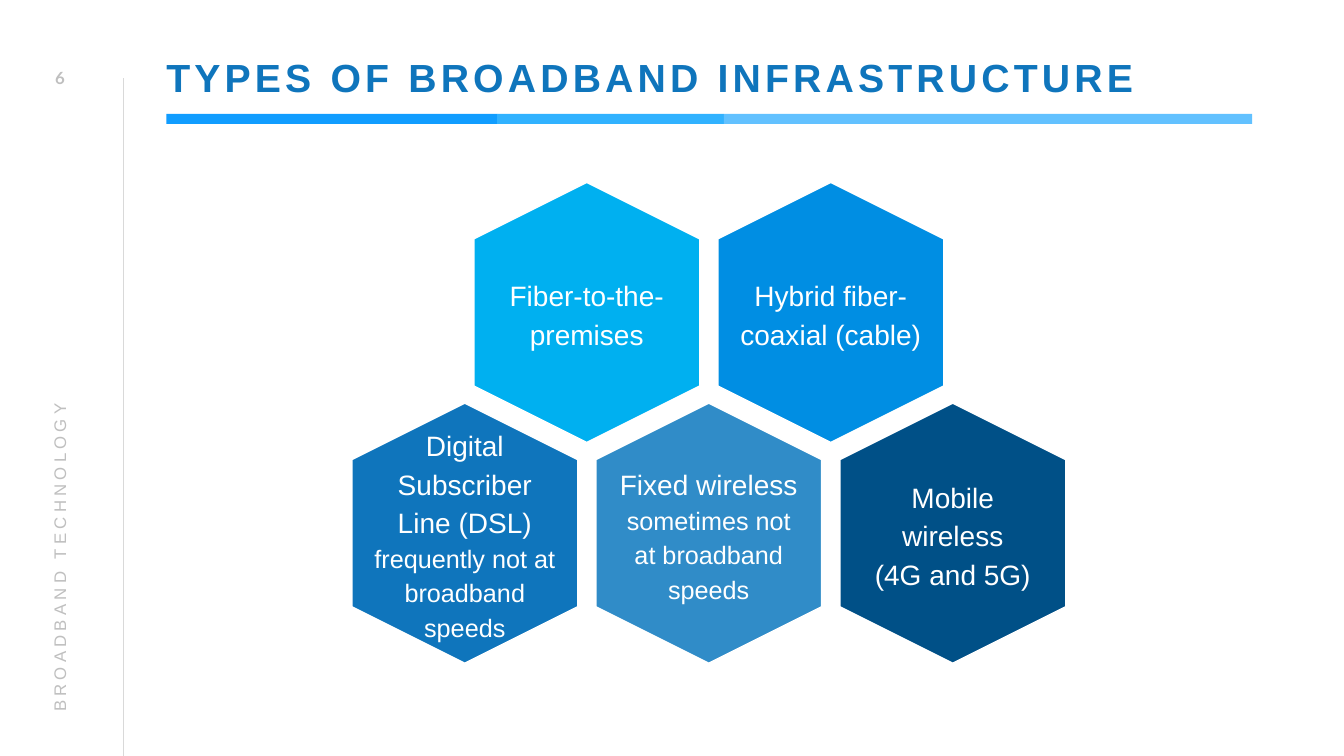
"""Build the slide on types of broadband infrastructure."""
from lxml import etree
from pptx import Presentation, util as u
from pptx.dml.color import RGBColor
from pptx.enum import shapes, text
from pptx.oxml import ns

WHITE = RGBColor(0xFF, 0xFF, 0xFF)
TITLE_BLUE = RGBColor(0x0F, 0x75, 0xBC)
GREY = RGBColor(0xBF, 0xBF, 0xBF)
RULE_GREY = RGBColor(0xD9, 0xD9, 0xD9)
CYAN = RGBColor(0x00, 0xB0, 0xF0)
AZURE = RGBColor(0x00, 0x8E, 0xE3)
STEEL = RGBColor(0x30, 0x8C, 0xC8)
NAVY = RGBColor(0x00, 0x50, 0x87)

TITLE = "TYPES OF BROADBAND INFRASTRUCTURE"
SECTION = "BROADBAND TECHNOLOGY"
PAGE = "6"
BAR_LEFT, BAR_TOP, BAR_HEIGHT = 1.65, 1.13, 0.1
BARS = [
    (3.28, RGBColor(0x11, 0x9D, 0xFF)),
    (2.25, RGBColor(0x31, 0xB2, 0xFF)),
    (5.24, RGBColor(0x62, 0xC1, 0xFF)),
]

HEX_WIDTH, HEX_HEIGHT, HEX_SHOULDER = 2.24, 2.58, 0.56
HEX_PITCH = 2.42
WIDE_INSETS, NARROW_INSETS = (0.22, 0.25), (0.18, 0.21)
HEX_ROWS = [
    (4.7, 1.81, [
        (CYAN, NARROW_INSETS, [("Fiber-to-the-premises", 20)]),
        (AZURE, WIDE_INSETS, [("Hybrid fiber-coaxial (cable)", 20)]),
    ]),
    (3.49, 4, [
        (TITLE_BLUE, WIDE_INSETS, [("Digital Subscriber Line (DSL)", 20),
                                   ("frequently not at broadband speeds", 18)]),
        (STEEL, WIDE_INSETS, [("Fixed wireless", 20),
                              ("sometimes not at broadband speeds", 18)]),
        (NAVY, NARROW_INSETS, [("Mobile wireless", 20), ("(4G and 5G)", 20)]),
    ]),
]


def add_run(paragraph, wording, size, color, font="Arial", bold=False, spacing=0):
    run = paragraph.add_run()
    run.text = wording
    run.font.size = u.Pt(size)
    run.font.name = font
    run.font.bold = bold
    run.font.color.rgb = color
    if spacing:
        run.font._element.set("spc", str(spacing * 100))


def set_frame(shape, insets):
    frame = shape.text_frame
    frame.word_wrap = True
    frame.vertical_anchor = text.MSO_ANCHOR.MIDDLE
    (frame.margin_left, frame.margin_top,
     frame.margin_right, frame.margin_bottom) = map(u.Inches, insets)
    return frame.paragraphs[0]


def add_label(slide, box, wording, size, color, insets=(0.1, 0.05, 0.1, 0.05),
              rotation=0, align=text.PP_ALIGN.LEFT, line_spacing=1.0, **style):
    shape = slide.shapes.add_textbox(*map(u.Inches, box))
    shape.rotation = rotation
    paragraph = set_frame(shape, insets)
    paragraph.alignment = align
    paragraph.line_spacing = line_spacing
    add_run(paragraph, wording, size, color, **style)


def add_side_rule(slide):
    rule = slide.shapes.add_connector(
        shapes.MSO_CONNECTOR.STRAIGHT, *map(u.Inches, (1.22, 7.5, 1.22, 0.77)))
    rule.line.color.rgb = RULE_GREY
    rule.line.width = u.Pt(0.5)
    etree.SubElement(rule._element.spPr, ns.qn("a:effectLst"))


def add_bars(slide):
    left = BAR_LEFT
    for width, color in BARS:
        bar = slide.shapes.add_shape(
            shapes.MSO_SHAPE.RECTANGLE,
            *map(u.Inches, (left, BAR_TOP, width, BAR_HEIGHT)))
        bar.shadow.inherit = False
        bar.fill.solid()
        bar.fill.fore_color.rgb = color
        bar.line.fill.background()
        left += width


def add_hexagon(slide, left, top, color, insets, lines):
    middle, right = left + HEX_WIDTH / 2, left + HEX_WIDTH
    upper, bottom = top + HEX_SHOULDER, top + HEX_HEIGHT
    lower = bottom - HEX_SHOULDER
    corners = [(middle, top), (right, upper), (right, lower),
               (middle, bottom), (left, lower), (left, upper)]
    points = [(u.Inches(x), u.Inches(y)) for x, y in corners]
    builder = slide.shapes.build_freeform(*points[0])
    builder.add_line_segments(points[1:], close=True)
    hexagon = builder.convert_to_shape()
    hexagon.shadow.inherit = False
    hexagon.fill.solid()
    hexagon.fill.fore_color.rgb = color
    hexagon.line.color.rgb = WHITE
    hexagon.line.width = u.Pt(1)
    paragraph = set_frame(hexagon, insets * 2)
    paragraph.alignment = text.PP_ALIGN.CENTER
    paragraph.line_spacing = 1.14
    for index, (wording, size) in enumerate(lines):
        if index:
            paragraph.add_line_break()
        add_run(paragraph, wording, size, WHITE)


def main():
    presentation = Presentation()
    presentation.slide_width = u.Inches(13.33)
    presentation.slide_height = u.Inches(7.5)
    slide = presentation.slides.add_slide(presentation.slide_layouts[6])
    add_side_rule(slide)
    add_bars(slide)
    add_label(slide, (BAR_LEFT, 0.4, 10.76, 0.74), TITLE, 28, TITLE_BLUE,
              insets=(0, 0.05, 0, 0), line_spacing=0.9, bold=True, spacing=3)
    add_label(slide, (-2.42, 3.95, 6.02, 0.4), SECTION, 12, GREY,
              rotation=270, spacing=3)
    add_label(slide, (0.27, 0.57, 0.65, 0.4), PAGE, 12, GREY,
              align=text.PP_ALIGN.CENTER, font="Lato", bold=True)
    for row_left, top, hexagons in HEX_ROWS:
        for column, hexagon in enumerate(hexagons):
            add_hexagon(slide, row_left + column * HEX_PITCH, top, *hexagon)
    presentation.save("out.pptx")


if __name__ == "__main__":
    main()
